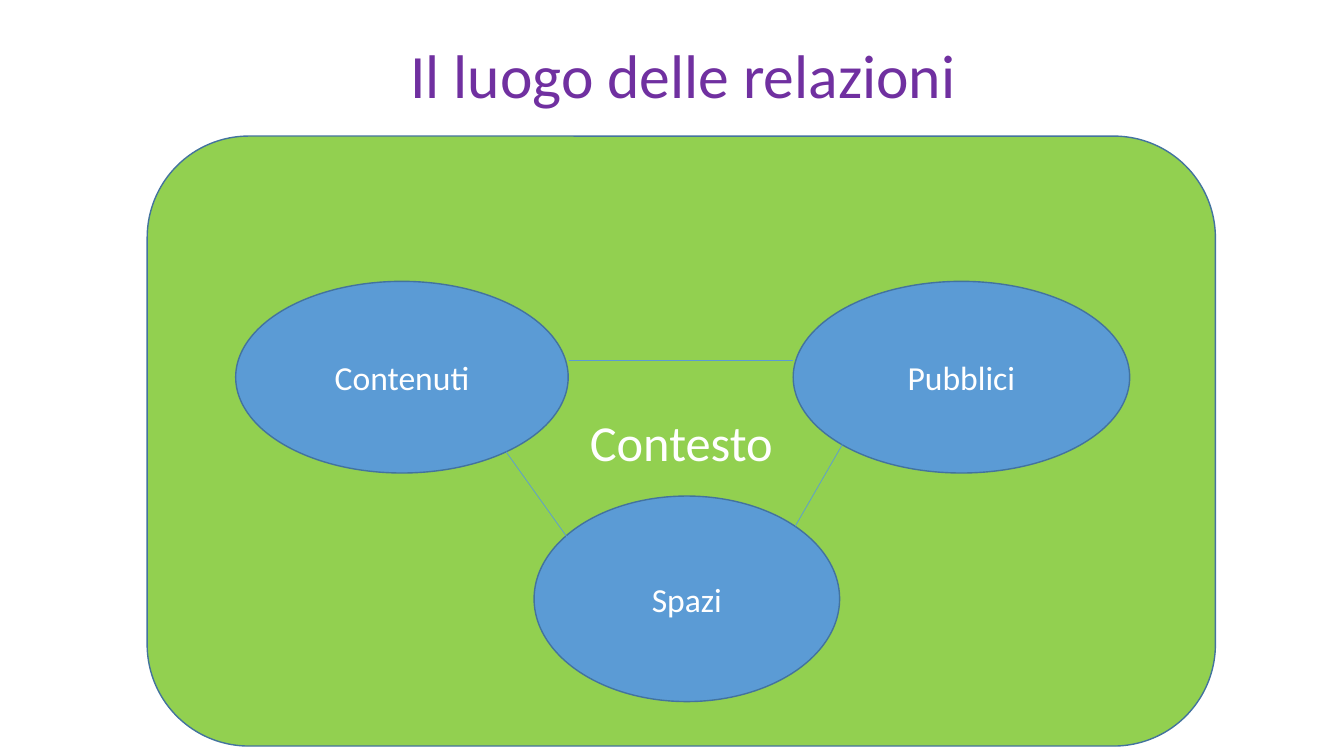
import pptx
import pptx.util
import pptx.dml.color
import pptx.enum.shapes
import pptx.enum.text
import pptx.oxml.ns
import lxml.etree
from pptx.util import Cm

KIND = pptx.enum.shapes.MSO_SHAPE


def color(code):
    return pptx.dml.color.RGBColor.from_string(code)


class Board:
    """Holds the style and the current slide, and draws on it."""
    face = "Calibri"
    white = "FFFFFF"
    blue = "5B9BD5"
    edge = "43739E"
    green = "92D050"
    purple = "7030A0"

    def __init__(self, deck):
        self.slide = deck.slides.add_slide(deck.slide_layouts[6])

    def label(self, shape, text, size, ink):
        frame = shape.text_frame
        frame.word_wrap = True
        frame.vertical_anchor = pptx.enum.text.MSO_ANCHOR.MIDDLE
        line = frame.paragraphs[0]
        line.text = text
        line.alignment = pptx.enum.text.PP_ALIGN.CENTER
        line.font.name = self.face
        line.font.size = pptx.util.Pt(size)
        line.font.color.rgb = color(ink)
        return line

    def title(self, text, box):
        shape = self.slide.shapes.add_textbox(*map(Cm, box))
        self.label(shape, text, 44, self.purple).line_spacing = 0.9

    def shape(self, kind, text, box, fill, size):
        shape = self.slide.shapes.add_shape(kind, *map(Cm, box))
        shape.shadow.inherit = False
        shape.fill.solid()
        shape.fill.fore_color.rgb = color(fill)
        shape.line.color.rgb = color(self.edge)
        shape.line.width = pptx.util.Pt(1)
        self.label(shape, text, size, self.white)

    def link(self, ends):
        straight = pptx.enum.shapes.MSO_CONNECTOR.STRAIGHT
        link = self.slide.shapes.add_connector(straight, *map(Cm, ends))
        link.line.color.rgb = color(self.blue)
        link.line.width = pptx.util.Pt(0.5)
        tag = pptx.oxml.ns.qn("a:effectLst")
        lxml.etree.SubElement(link._element.spPr, tag)


def main():
    deck = pptx.Presentation()
    deck.slide_width = Cm(33.87)
    deck.slide_height = Cm(19.05)
    board = Board(deck)

    board.title("Il luogo delle relazioni ", (2.79, 0.13, 29.21, 3.68))
    board.shape(KIND.ROUNDED_RECTANGLE, "Contesto",
                (3.71, 3.43, 26.92, 15.37), board.green, 36)

    themes = [
        ("Contenuti", (5.94, 7.09, 8.38, 4.83)),
        ("Spazi", (13.46, 12.5, 7.7, 5.18)),
        ("Pubblici", (19.99, 7.09, 8.48, 4.83)),
    ]
    for text, box in themes:
        board.shape(KIND.OVAL, text, box, board.blue, 24)

    links = [
        (14.33, 9.09, 19.99, 9.09),
        (21.23, 11.2, 20.04, 13.26),
        (12.75, 11.38, 14.33, 13.59),
    ]
    for ends in links:
        board.link(ends)

    deck.save("out.pptx")


if __name__ == "__main__":
    main()
